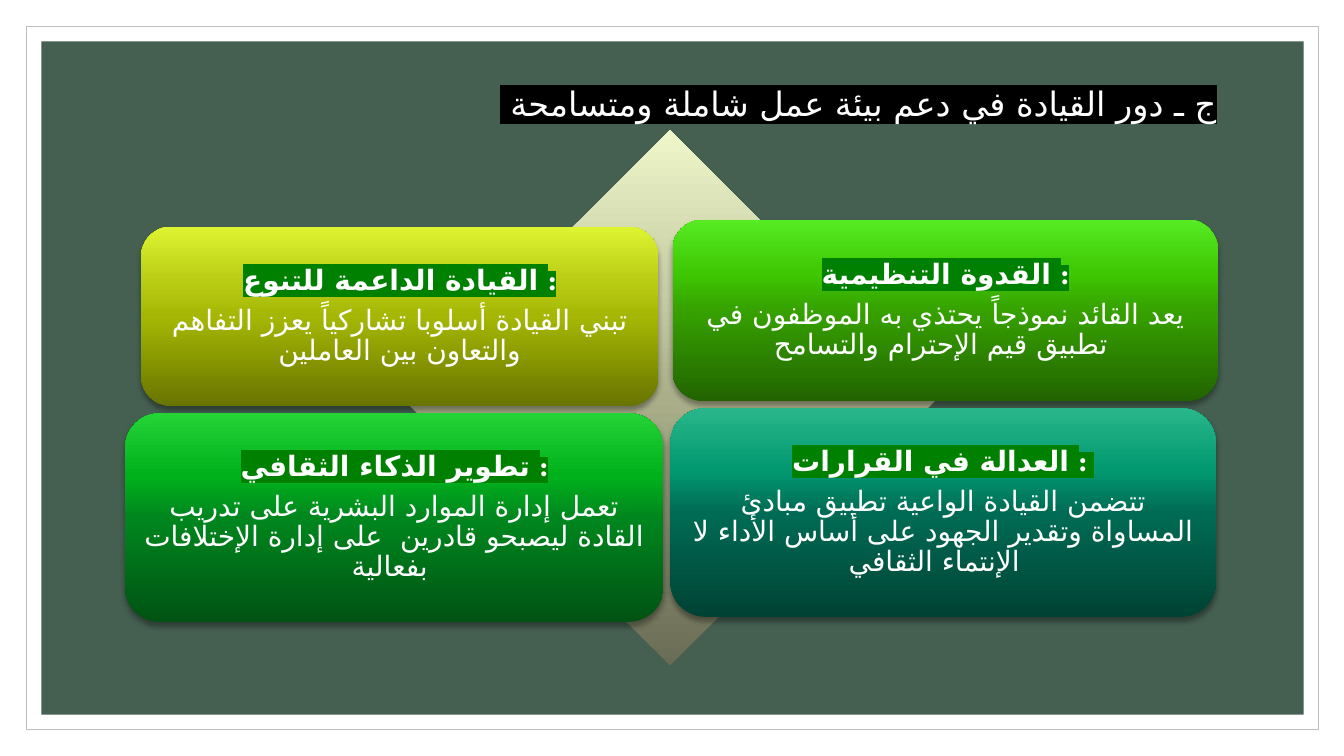
from lxml.etree import SubElement
from pptx import Presentation
from pptx.dml.color import RGBColor
from pptx.enum.shapes import MSO_SHAPE
from pptx.enum.text import MSO_ANCHOR, MSO_AUTO_SIZE, PP_ALIGN
from pptx.oxml.ns import qn
from pptx.util import Inches, Pt

FONT = "League Spartan"
ARABIC = "DejaVu Sans"
COLORS = {
    "white": "FFFFFF", "black": "000000", "border": "BFBFBF",
    "panel": "455F51", "mark": "008000",
}
STOPS = (0, 50, 70, 100)
BLENDS = {
    "sand": ("6A6D55", "AAAF8A", "C6CCA4", "EFF6C9"),
    "lime": ("687400", "A5B704", "BACD15", "DEF431"),
    "leaf": ("226400", "36A100", "3EC702", "56EB23"),
    "green": ("005313", "00861E", "00B11C", "24D336"),
    "teal": ("004334", "006B54", "029870", "29B68A"),
}
CARDS = [
    ((1.4, 2.25, 5.13, 1.78), "lime", "القيادة الداعمة للتنوع :",
     "تبني القيادة أسلوبا تشاركياً يعزز التفاهم والتعاون بين العاملين"),
    ((6.67, 2.18, 5.41, 1.8), "leaf", "القدوة التنظيمية :",
     "يعد القائد نموذجاً يحتذي به الموظفون في تطبيق قيم الإحترام والتسامح "),
    ((1.24, 4.1, 5.34, 2.07), "green", "تطوير الذكاء الثقافي :",
     "تعمل إدارة الموارد البشرية على تدريب القادة ليصبحو قادرين  على إدارة الإختلافات بفعالية "),
    ((6.65, 4.05, 5.41, 2.07), "teal", "العدالة في القرارات : ",
     "تتضمن القيادة الواعية تطبيق مبادئ المساواة وتقدير الجهود على أساس الأداء لا  الإنتماء الثقافي "),
]


def color(key):
    return RGBColor.from_string(COLORS[key])


def add_shape(slide, kind, box):
    shape = slide.shapes.add_shape(kind, *map(Inches, box))
    shape.shadow.inherit = False
    shape.line.fill.background()
    return shape


def blend(shape, name):
    shape.fill.gradient()
    shape.fill.gradient_angle = 90
    stops = shape._element.spPr.find(".//" + qn("a:gsLst"))
    for old in list(stops):
        stops.remove(old)
    for place, tone in zip(STOPS, BLENDS[name]):
        stop = SubElement(stops, qn("a:gs"), pos=str(place * 1000))
        SubElement(stop, qn("a:srgbClr"), val=tone)


def cast_shadow(shape):
    effects = shape._element.spPr.find(qn("a:effectLst"))
    shadow = SubElement(effects, qn("a:outerShdw"), blurRad=str(Pt(4)),
                        dist=str(Pt(3)), dir="5400000", rotWithShape="0")
    tone = SubElement(shadow, qn("a:srgbClr"), val=COLORS["black"])
    SubElement(tone, qn("a:alpha"), val="35000")


def format_text(para, size, align, bold=False, mark=None):
    para.alignment = align
    para.line_spacing = 0.9
    for run in para.runs:
        font = run.font
        font.size, font.bold, font.name = Pt(size), bold, FONT
        font.color.rgb = color("white")
        props = run._r.get_or_add_rPr()
        SubElement(props, qn("a:cs"), typeface=ARABIC)
        if mark:
            light = SubElement(props, qn("a:highlight"))
            SubElement(light, qn("a:srgbClr"), val=COLORS[mark])
            props.find(qn("a:solidFill")).addnext(light)


def add_frame(slide, box):
    left, top, width, height = box
    outer = add_shape(slide, MSO_SHAPE.RECTANGLE, box)
    outer.fill.solid()
    outer.fill.fore_color.rgb = color("white")
    outer.line.color.rgb = color("border")
    outer.line.width = Pt(0.5)
    gap = 0.15
    panel = add_shape(slide, MSO_SHAPE.RECTANGLE,
                      (left + gap, top + gap, width - 2 * gap, height - 2 * gap))
    panel.fill.solid()
    panel.fill.fore_color.rgb = color("panel")


def add_title(slide, box, text):
    title = slide.shapes.title
    title.left, title.top, title.width, title.height = map(Inches, box)
    slide.shapes._spTree.append(title._element)
    frame = title.text_frame
    frame.text = text
    frame.auto_size = MSO_AUTO_SIZE.NONE
    frame.vertical_anchor = MSO_ANCHOR.MIDDLE
    para = frame.paragraphs[0]
    format_text(para, 24, PP_ALIGN.RIGHT, mark="black")
    para._p.get_or_add_pPr().set("rtl", "1")


def add_card(slide, box, name, head, body):
    card = add_shape(slide, MSO_SHAPE.ROUNDED_RECTANGLE, box)
    blend(card, name)
    cast_shadow(card)
    frame = card.text_frame
    frame.word_wrap = True
    frame.vertical_anchor = MSO_ANCHOR.MIDDLE
    frame.margin_left = frame.margin_right = Inches(0.08)
    frame.margin_top = frame.margin_bottom = Inches(0.08)
    frame.text = head
    frame.add_paragraph().text = body
    for para, bold, mark in zip(frame.paragraphs, (True, False), ("mark", None)):
        format_text(para, 20, PP_ALIGN.CENTER, bold, mark)
        after = SubElement(para._p.get_or_add_pPr(), qn("a:spcAft"))
        SubElement(after, qn("a:spcPct"), val="35000")


def add_matrix(slide, box):
    diamond = add_shape(slide, MSO_SHAPE.DIAMOND, box)
    blend(diamond, "sand")
    for card in CARDS:
        add_card(slide, *card)


def main():
    deck = Presentation()
    deck.slide_width, deck.slide_height = Inches(13.33), Inches(7.5)
    slide = deck.slides.add_slide(deck.slide_layouts[5])
    add_frame(slide, (0.26, 0.26, 12.82, 6.98))
    add_title(slide, (1.17, 0.7, 11, 0.69),
              "ج ـ دور القيادة في دعم بيئة عمل شاملة ومتسامحة ")
    add_matrix(slide, (3.99, 1.29, 5.31, 5.31))
    deck.save("out.pptx")


if __name__ == "__main__":
    main()
